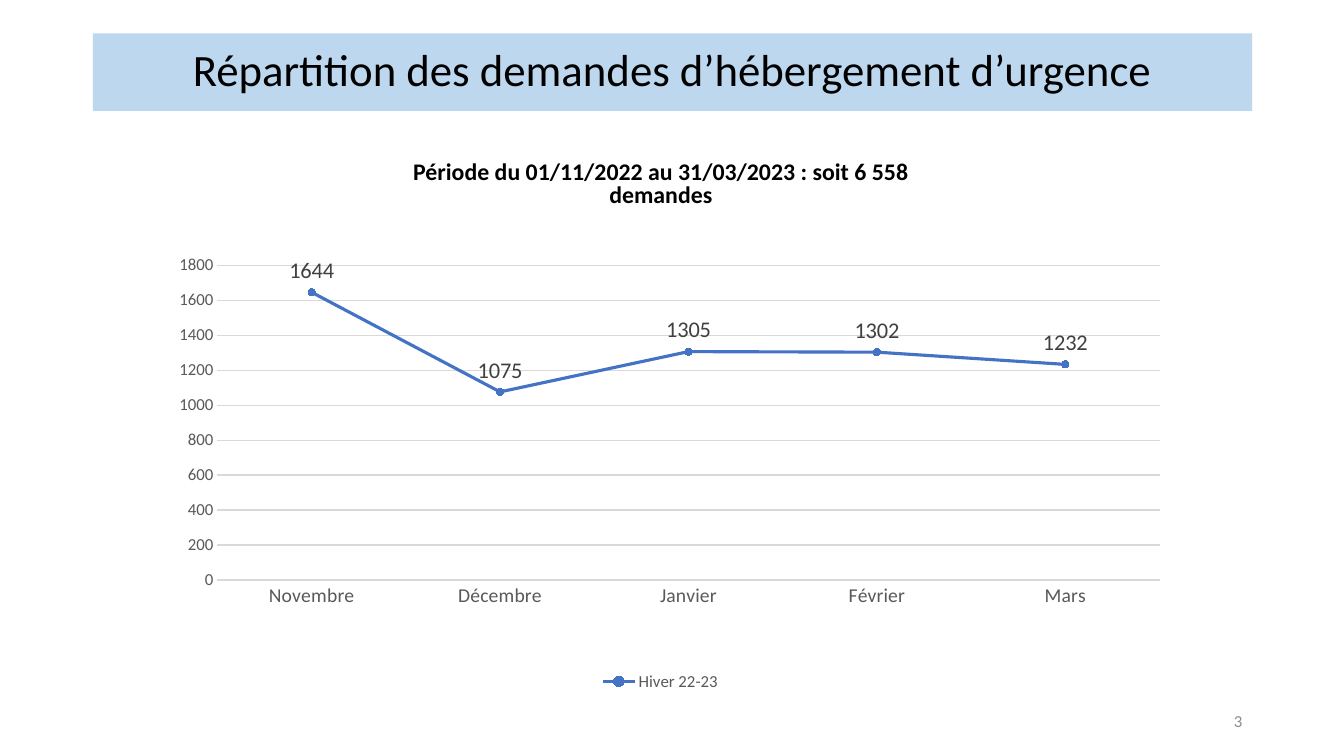
from pptx import Presentation
from pptx.chart.data import CategoryChartData as Data
from pptx.dml.color import RGBColor as RGB
from pptx.enum.chart import XL_CHART_TYPE as Kind, XL_LABEL_POSITION as Spot
from pptx.enum.chart import XL_LEGEND_POSITION as Side, XL_MARKER_STYLE as Mark
from pptx.enum.chart import XL_TICK_MARK as Tick
from pptx.enum.text import MSO_ANCHOR as Anchor, MSO_AUTO_SIZE as Auto, PP_ALIGN as Align
from pptx.oxml import parse_xml
from pptx.oxml.ns import nsdecls, qn
from pptx.util import Inches, Pt

FACE = "Calibri"
BLUE, GREY, RULE = "4472C4", "595959", "D9D9D9"
MONTHS = ["Novembre", "Décembre", "Janvier", "Février", "Mars"]
CALLS = [1644, 1075, 1305, 1302, 1232]
PLOT = {"x": 0.091, "y": 0.101, "w": 0.87, "h": 0.658}


def paint(item, tint):
    """Give a fill or a font colour from a hex string."""
    if hasattr(item, "solid"):
        item.solid()
        item = item.fore_color
    elif hasattr(item, "color"):
        item = item.color
    item.rgb = RGB.from_string(tint)


def style(font, size, tint, bold=False):
    """Set face, size, weight and colour of a font."""
    font.name, font.size, font.bold = FACE, Pt(size), bold
    paint(font, tint)


def rule(line, tint, width):
    """Set colour and width of a line."""
    paint(line, tint)
    line.width = Pt(width)


def place(shape, box):
    """Move a shape to a box given in inches."""
    shape.left, shape.top, shape.width, shape.height = map(Inches, box)


def write(shape, box, text, size, tint, align, anchor, bold=False):
    """Place a shape and fill it with one paragraph, which is returned."""
    place(shape, box)
    frame = shape.text_frame
    frame.text = text
    frame.word_wrap, frame.auto_size = True, Auto.NONE
    frame.vertical_anchor = anchor
    para = frame.paragraphs[0]
    para.alignment = align
    style(para.font, size, tint, bold)
    return para


def head(slide, box):
    """Write the title on its blue band."""
    title = slide.shapes.title
    para = write(title, box, "Répartition des demandes d’hébergement d’urgence",
                 32, "000000", Align.CENTER, Anchor.MIDDLE)
    para.line_spacing = 0.9
    paint(title.fill, "BDD7EE")


def period(slide, box):
    """Write the period above the chart."""
    para = write(slide.placeholders[1], box,
                 "Période du 01/11/2022 au 31/03/2023 : soit 6 558 demandes",
                 17, "000000", Align.CENTER, Anchor.BOTTOM, True)
    para.line_spacing, para.space_before = 0.8, Pt(10)
    props = para._p.get_or_add_pPr()
    props.set("marL", "0")
    props.set("indent", "0")
    bullet = parse_xml(f"<a:buNone {nsdecls('a')}/>")
    props.find(qn("a:spcBef")).addnext(bullet)


def frame_plot(chart):
    """Fix the inner plot area as shares of the chart."""
    modes = "".join(f'<c:{k}Mode val="edge"/>' for k in "xy")
    sizes = "".join(f'<c:{k} val="{v}"/>' for k, v in PLOT.items())
    area = chart._chartSpace.chart.plotArea
    for old in area.findall(qn("c:layout")):
        area.remove(old)
    area.insert(0, parse_xml(
        f"<c:layout {nsdecls('c')}><c:manualLayout>"
        f'<c:layoutTarget val="inner"/>{modes}{sizes}'
        "</c:manualLayout></c:layout>"))


def axes(chart):
    """Format both axes and the grid."""
    months, count = chart.category_axis, chart.value_axis
    for axis, size in ((months, 14), (count, 12)):
        axis.major_tick_mark = axis.minor_tick_mark = Tick.NONE
        style(axis.tick_labels.font, size, GREY)
    rule(months.format.line, RULE, 0.75)
    count.format.line.fill.background()
    count.minimum_scale, count.maximum_scale, count.major_unit = 0, 1800, 200
    rule(count.major_gridlines.format.line, RULE, 0.75)


def curve(series):
    """Format the line, its markers and its labels."""
    series.smooth = False
    rule(series.format.line, BLUE, 2.25)
    mark = series.marker
    mark.style, mark.size = Mark.CIRCLE, 5
    paint(mark.format.fill, BLUE)
    rule(mark.format.line, BLUE, 0.75)
    labels = series.data_labels
    labels.show_value, labels.position = True, Spot.ABOVE
    style(labels.font, 16, "404040")


def graph(slide, box):
    """Draw the monthly line chart."""
    data = Data()
    data.categories = MONTHS
    data.add_series("Hiver 22-23", CALLS)
    chart = slide.shapes.add_chart(Kind.LINE_MARKERS, *map(Inches, box), data).chart
    chart.has_title = False
    style(chart.font, 10, "000000")
    chart.plots[0].vary_by_categories = False
    chart.has_legend = True
    chart.legend.position, chart.legend.include_in_layout = Side.BOTTOM, False
    style(chart.legend.font, 12, GREY)
    axes(chart)
    curve(chart.plots[0].series[0])
    frame_plot(chart)


def folio(slide, box):
    """Write the page number."""
    write(slide.shapes.add_textbox(*map(Inches, box)), box, "3",
          12, "8C8C8C", Align.RIGHT, Anchor.MIDDLE)


def main():
    """Build the slide and save it."""
    deck = Presentation()
    deck.slide_width, deck.slide_height = Inches(13.33), Inches(7.5)
    slide = deck.slides.add_slide(deck.slide_layouts[1])
    head(slide, (0.92, 0.33, 11.5, 0.77))
    graph(slide, (1.18, 2.15, 10.74, 4.75))
    period(slide, (3.46, 1.59, 6.19, 0.52))
    folio(slide, (9.42, 6.95, 3, 0.4))
    deck.save("out.pptx")


if __name__ == "__main__":
    main()
